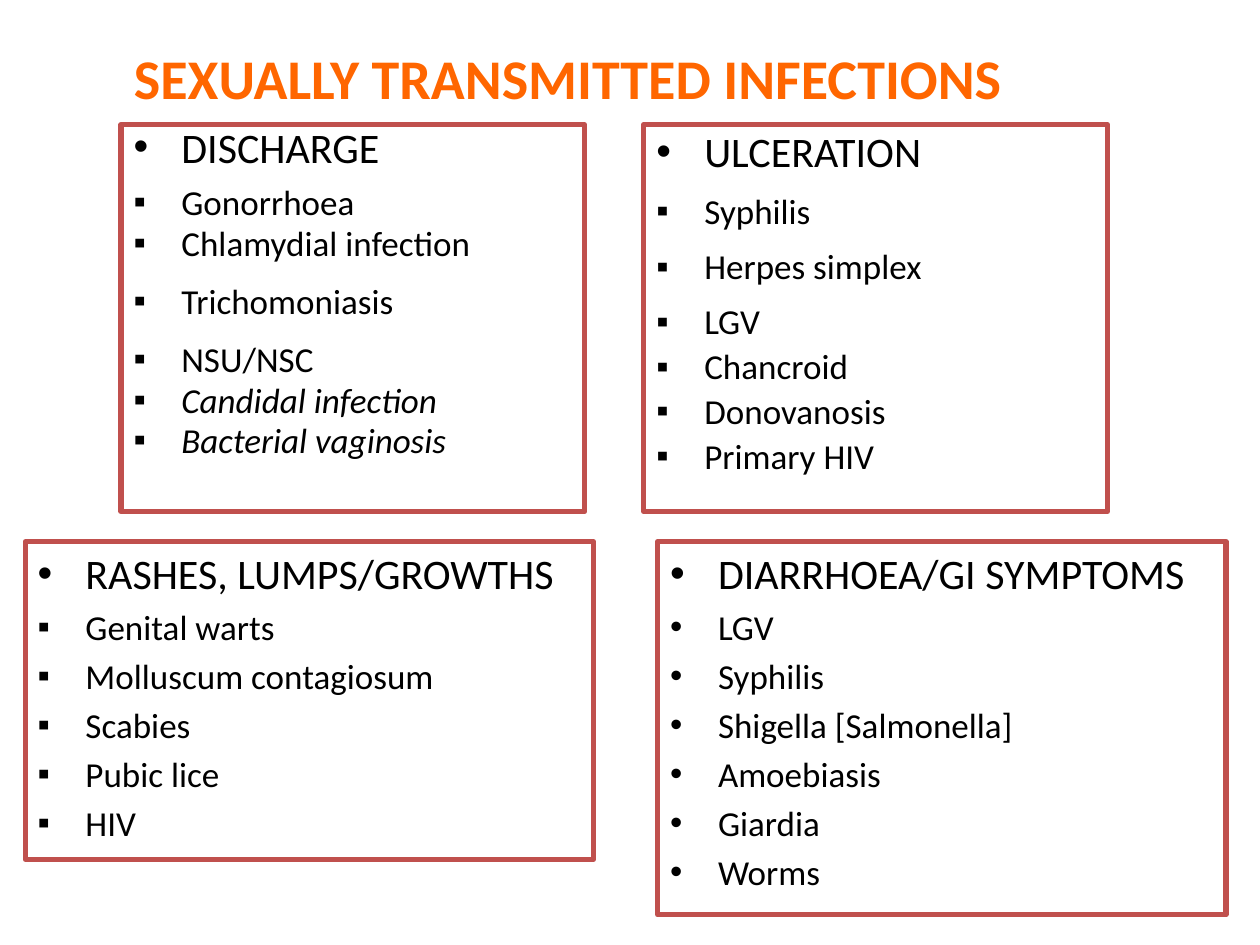
from lxml import etree
from pptx import Presentation
from pptx.dml.color import RGBColor
from pptx.enum.text import MSO_ANCHOR, MSO_AUTO_SIZE, PP_ALIGN
from pptx.oxml.ns import qn
from pptx.util import Inches, Pt

ORANGE = RGBColor(0xFF, 0x66, 0x00)
RED = RGBColor(0xC0, 0x50, 0x4D)
BLACK = RGBColor(0x00, 0x00, 0x00)
BOTTOM, TOP = MSO_ANCHOR.BOTTOM, MSO_ANCHOR.TOP
CENTER, LEFT = PP_ALIGN.CENTER, PP_ALIGN.LEFT
NO_AUTOFIT = MSO_AUTO_SIZE.NONE

FONT = "Calibri"
SLIDE_WIDTH, SLIDE_HEIGHT = Inches(10), Inches(7.5)
INDENT = Inches(0.38)
HEADING_SIZE, ITEM_SIZE = 24, 20
NORMAL_GAP, WIDE_GAP, WIDEST_GAP = 0.2, 0.5, 0.7  # shares of the text size
ROUND, SQUARE = "•", "▪"

# Columns and rows, in percent of the slide's width and height
UPPER_TOP, UPPER_WIDTH, UPPER_HEIGHT = 13.2, 36.8, 40.93
LOWER_TOP, LOWER_WIDTH = 57.33, 45.1

DISCHARGE = [
    ("Gonorrhoea", WIDE_GAP),
    ("Chlamydial infection", NORMAL_GAP),
    ("Trichomoniasis", WIDEST_GAP),
    ("NSU/NSC", WIDEST_GAP),
    ("Candidal infection", NORMAL_GAP),
    ("Bacterial vaginosis", NORMAL_GAP),
]
NOT_STRICTLY_SEXUAL = {"Candidal infection", "Bacterial vaginosis"}
ULCERATION = [
    ("Syphilis", WIDE_GAP),
    ("Herpes simplex", WIDE_GAP),
    ("LGV", WIDE_GAP),
    ("Chancroid", NORMAL_GAP),
    ("Donovanosis", NORMAL_GAP),
    ("Primary HIV", NORMAL_GAP),
]
RASHES = ["Genital warts", "Molluscum contagiosum", "Scabies", "Pubic lice", "HIV"]
DIARRHOEA = ["LGV", "Syphilis", "Shigella [Salmonella]", "Amoebiasis", "Giardia", "Worms"]


def place(box, left, top, width, height):
    """Position a box by percentages of the slide."""
    box.left, box.width = (int(SLIDE_WIDTH * share / 100) for share in (left, width))
    box.top, box.height = (int(SLIDE_HEIGHT * share / 100) for share in (top, height))


def prepare_frame(box, anchor):
    frame = box.text_frame
    frame.word_wrap = True
    frame.auto_size = NO_AUTOFIT
    frame.vertical_anchor = anchor
    return frame


def set_font(para, size, color, bold=False, italic=False):
    font = para.font
    font.name, font.size = FONT, Pt(size)
    font.bold, font.italic = bold, italic
    font.color.rgb = color


def set_bullet(para, char):
    """Give a paragraph a hanging bullet."""
    properties = para._p.get_or_add_pPr()
    properties.set("marL", str(INDENT))
    properties.set("indent", str(-INDENT))
    etree.SubElement(properties, qn("a:buFont"), typeface="Arial")
    etree.SubElement(properties, qn("a:buChar"), char=char)


def write_line(para, text, size, gap, bullet, line_spacing):
    para.text = text
    para.alignment = LEFT
    set_bullet(para, bullet)
    para.line_spacing = line_spacing
    para.space_before = Pt(size * gap)
    set_font(para, size, BLACK, italic=text in NOT_STRICTLY_SEXUAL)


def fill_panel(box, heading, items, bullet=SQUARE, line_spacing=1.0):
    """Outline a box and write its heading and (text, gap) items."""
    box.line.color.rgb = RED
    box.line.width = Pt(3)
    frame = prepare_frame(box, TOP)
    write_line(frame.paragraphs[0], heading, HEADING_SIZE, NORMAL_GAP, ROUND, line_spacing)
    for text, gap in items:
        write_line(frame.add_paragraph(), text, ITEM_SIZE, gap, bullet, line_spacing)


def write_title(title, text):
    place(title, 0, -0.4, 90.2, 12.8)
    para = prepare_frame(title, BOTTOM).paragraphs[0]
    para.text = text
    para.alignment = CENTER
    set_font(para, 32, ORANGE, bold=True)


def add_upper_panel(slide, index, left, heading, items, line_spacing):
    box = slide.placeholders[index]
    place(box, left, UPPER_TOP, UPPER_WIDTH, UPPER_HEIGHT)
    fill_panel(box, heading, items, line_spacing=line_spacing)


def add_lower_panel(slide, left, height, heading, names, bullet):
    box = slide.shapes.add_textbox(0, 0, 0, 0)
    place(box, left, LOWER_TOP, LOWER_WIDTH, height)
    fill_panel(box, heading, [(name, NORMAL_GAP) for name in names], bullet)


def main():
    deck = Presentation()
    deck.slide_width, deck.slide_height = SLIDE_WIDTH, SLIDE_HEIGHT
    slide = deck.slides.add_slide(deck.slide_layouts.get_by_name("Two Content"))

    write_title(slide.shapes.title, "SEXUALLY TRANSMITTED INFECTIONS")
    add_upper_panel(slide, 1, 9.6, "DISCHARGE", DISCHARGE, 0.8)
    add_upper_panel(slide, 2, 51.1, "ULCERATION", ULCERATION, 0.9)
    add_lower_panel(slide, 2, 33.6, "RASHES, LUMPS/GROWTHS", RASHES, SQUARE)
    add_lower_panel(slide, 52.2, 39.47, "DIARRHOEA/GI SYMPTOMS", DIARRHOEA, ROUND)

    deck.save("out.pptx")


if __name__ == "__main__":
    main()
